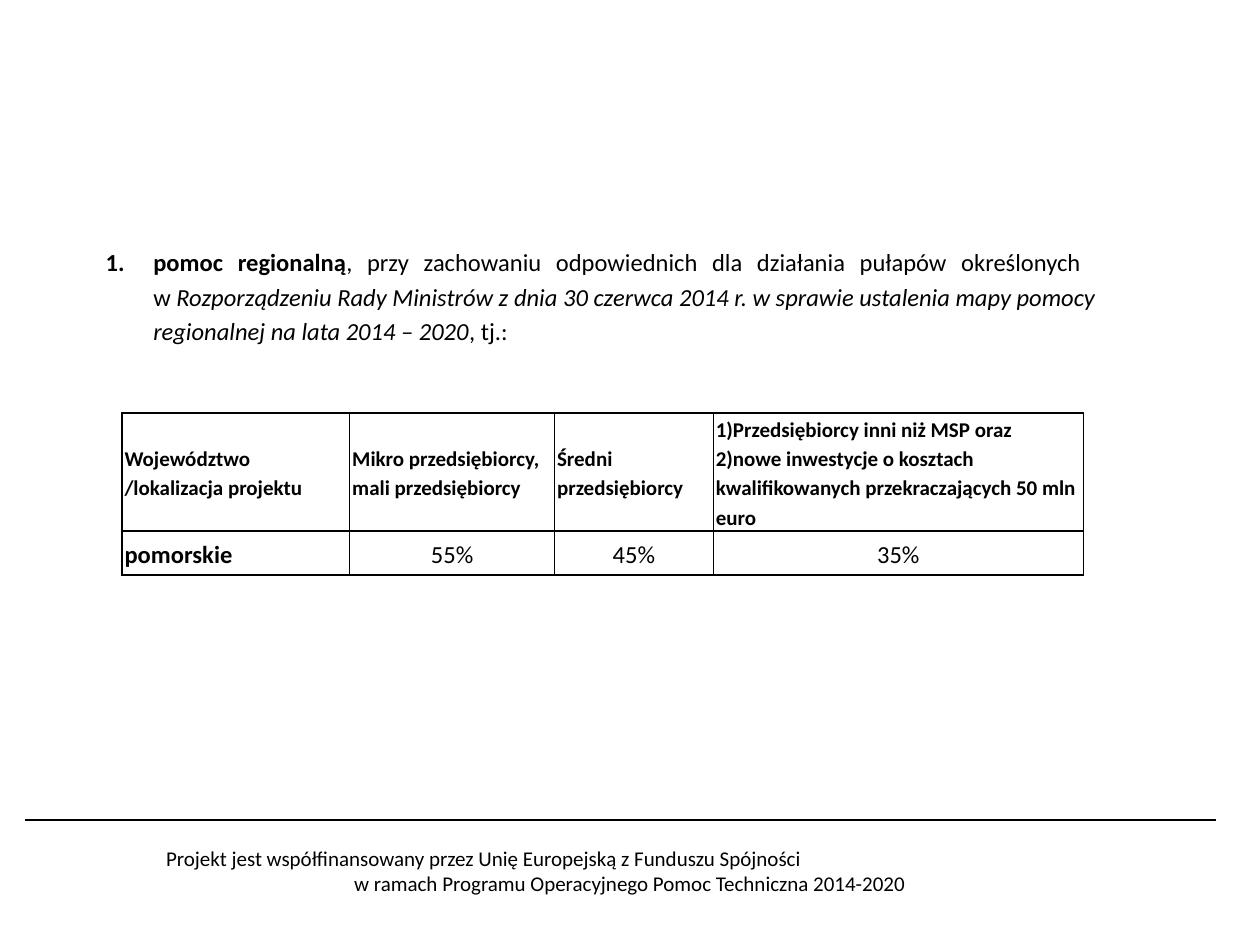
from dataclasses import dataclass

import pptx
import pptx.dml.color
import pptx.enum.shapes
import pptx.enum.text
import pptx.oxml.ns
import pptx.util
from lxml import etree

Cm = pptx.util.Cm
Pt = pptx.util.Pt
ALIGN = pptx.enum.text.PP_ALIGN
ANCHOR = pptx.enum.text.MSO_ANCHOR
qn = pptx.oxml.ns.qn


@dataclass(frozen=True)
class Theme:
    font: str = "Calibri"
    ink: str = "000000"
    paper: str = "FFFFFF"
    body: int = 14
    small: int = 12
    spacing: float = 1.15
    border: float = 1

    def color(self, value: str) -> pptx.dml.color.RGBColor:
        return pptx.dml.color.RGBColor.from_string(value)


@dataclass(frozen=True)
class Span:
    text: str
    bold: bool = False
    italic: bool = False


@dataclass(frozen=True)
class CellText:
    text: str
    size: int
    bold: bool
    align: ALIGN


@dataclass(frozen=True)
class Grid:
    left: float
    top: float
    widths: tuple[float, ...]
    heights: tuple[float, ...]


THEME = Theme()

AID_ITEM = [
    Span("pomoc regionalną", bold=True),
    Span(", przy zachowaniu odpowiednich dla działania pułapów określonych \vw "),
    Span("Rozporządzeniu Rady Ministrów z dnia 30 czerwca 2014 r. w sprawie ustalenia "
         "mapy pomocy regionalnej na lata 2014 – 2020", italic=True),
    Span(", tj.: "),
]

HEADERS = [
    ("Województwo /lokalizacja projektu", ALIGN.JUSTIFY),
    ("Mikro przedsiębiorcy, \nmali przedsiębiorcy", ALIGN.JUSTIFY),
    ("Średni przedsiębiorcy", ALIGN.JUSTIFY),
    ("1)Przedsiębiorcy inni niż MSP oraz\n"
     "2)nowe inwestycje o kosztach kwalifikowanych przekraczających 50 mln euro", ALIGN.LEFT),
]
RATES = ["55%", "45%", "35%"]
AID_ROWS = [
    [CellText(text, THEME.small, True, align) for text, align in HEADERS],
    [CellText("pomorskie", THEME.body, True, ALIGN.LEFT)]
    + [CellText(rate, THEME.body, False, ALIGN.CENTER) for rate in RATES],
]
RATE_GRID = Grid(2.46, 8.33, (4.59, 4.13, 3.2, 7.46), (2.34, 0.89))
ITEM_GRID = Grid(1.88, 4.92, (20.47,), (2.06,))

FOOTER = [
    ("Projekt jest współfinansowany przez Unię Europejską z Funduszu Spójności", ALIGN.LEFT),
    ("w ramach Programu Operacyjnego Pomoc Techniczna 2014-2020", ALIGN.CENTER),
]


def style_run(r, size: int, bold: bool = False, italic: bool = False) -> None:
    r.font.name = THEME.font
    r.font.size = Pt(size)
    r.font.bold = bold
    r.font.italic = italic
    r.font.color.rgb = THEME.color(THEME.ink)


def draw_footer(s) -> None:
    sp = s.shapes.add_shape(pptx.enum.shapes.MSO_SHAPE.RECTANGLE,
                            Cm(3.1), Cm(16.92), Cm(19.2), Cm(1.27))
    sp.shadow.inherit = False
    sp.fill.solid()
    sp.fill.fore_color.rgb = THEME.color(THEME.paper)
    sp.line.color.rgb = THEME.color(THEME.paper)
    sp.line.width = Pt(0.25)
    tf = sp.text_frame
    tf.text = "\n".join(text for text, _ in FOOTER)
    tf.vertical_anchor = ANCHOR.MIDDLE
    for p, (_, align) in zip(tf.paragraphs, FOOTER):
        p.alignment = align
        style_run(p.runs[0], THEME.small)

    rule = s.shapes.add_connector(pptx.enum.shapes.MSO_CONNECTOR.STRAIGHT,
                                  Cm(0.5), Cm(16.53), Cm(24.51), Cm(16.53))
    rule.line.color.rgb = THEME.color(THEME.ink)
    rule.line.width = Pt(0.75)
    etree.SubElement(rule._element.spPr, qn("a:effectLst"))


def add_grid(s, grid: Grid):
    table = s.shapes.add_table(len(grid.heights), len(grid.widths), Cm(grid.left), Cm(grid.top),
                               Cm(sum(grid.widths)), Cm(sum(grid.heights))).table
    table.first_row = False
    table.horz_banding = False
    for column, width in zip(table.columns, grid.widths):
        column.width = Cm(width)
    for row, height in zip(table.rows, grid.heights):
        row.height = Cm(height)
    return table


def format_cell(cell, side_margin: float, anchor: ANCHOR) -> None:
    cell.fill.background()
    cell.vertical_anchor = anchor
    cell.margin_left = cell.margin_right = Cm(side_margin)
    cell.margin_top = cell.margin_bottom = 0


def draw_borders(cell) -> None:
    tcPr = cell._tc.get_or_add_tcPr()
    for side in ("lnL", "lnR", "lnT", "lnB"):
        ln = etree.SubElement(tcPr, qn(f"a:{side}"), w=str(Pt(THEME.border)))
        fill = etree.SubElement(ln, qn("a:solidFill"))
        etree.SubElement(fill, qn("a:srgbClr"), val=THEME.ink)


def fill_cell(cell, content: CellText) -> None:
    draw_borders(cell)
    format_cell(cell, 0.05, ANCHOR.MIDDLE)
    cell.text_frame.text = content.text
    for p in cell.text_frame.paragraphs:
        p.alignment = content.align
        p.line_spacing = THEME.spacing
        style_run(p.runs[0], content.size, content.bold)


def draw_rates(s) -> None:
    table = add_grid(s, RATE_GRID)
    for row, contents in zip(table.rows, AID_ROWS):
        for cell, content in zip(row.cells, contents):
            fill_cell(cell, content)


def draw_item(s) -> None:
    cell = add_grid(s, ITEM_GRID).cell(0, 0)
    format_cell(cell, 0.25, ANCHOR.TOP)
    p = cell.text_frame.paragraphs[0]
    pPr = p._p.get_or_add_pPr()
    pPr.set("marL", str(Cm(0.96)))
    pPr.set("indent", str(-Cm(0.96)))
    etree.SubElement(pPr, qn("a:buFont"), typeface=THEME.font)
    etree.SubElement(pPr, qn("a:buAutoNum"), type="arabicPeriod")
    p.alignment = ALIGN.JUSTIFY
    p.line_spacing = THEME.spacing
    for span in AID_ITEM:
        for i, part in enumerate(span.text.split("\v")):
            if i:
                p.add_line_break()
            r = p.add_run()
            r.text = part
            style_run(r, THEME.body, span.bold, span.italic)


def main() -> None:
    prs = pptx.Presentation()
    prs.slide_width, prs.slide_height = Cm(25.4), Cm(19.05)
    s = prs.slides.add_slide(prs.slide_layouts[6])
    draw_footer(s)
    draw_rates(s)
    draw_item(s)
    prs.save("out.pptx")


if __name__ == "__main__":
    main()
